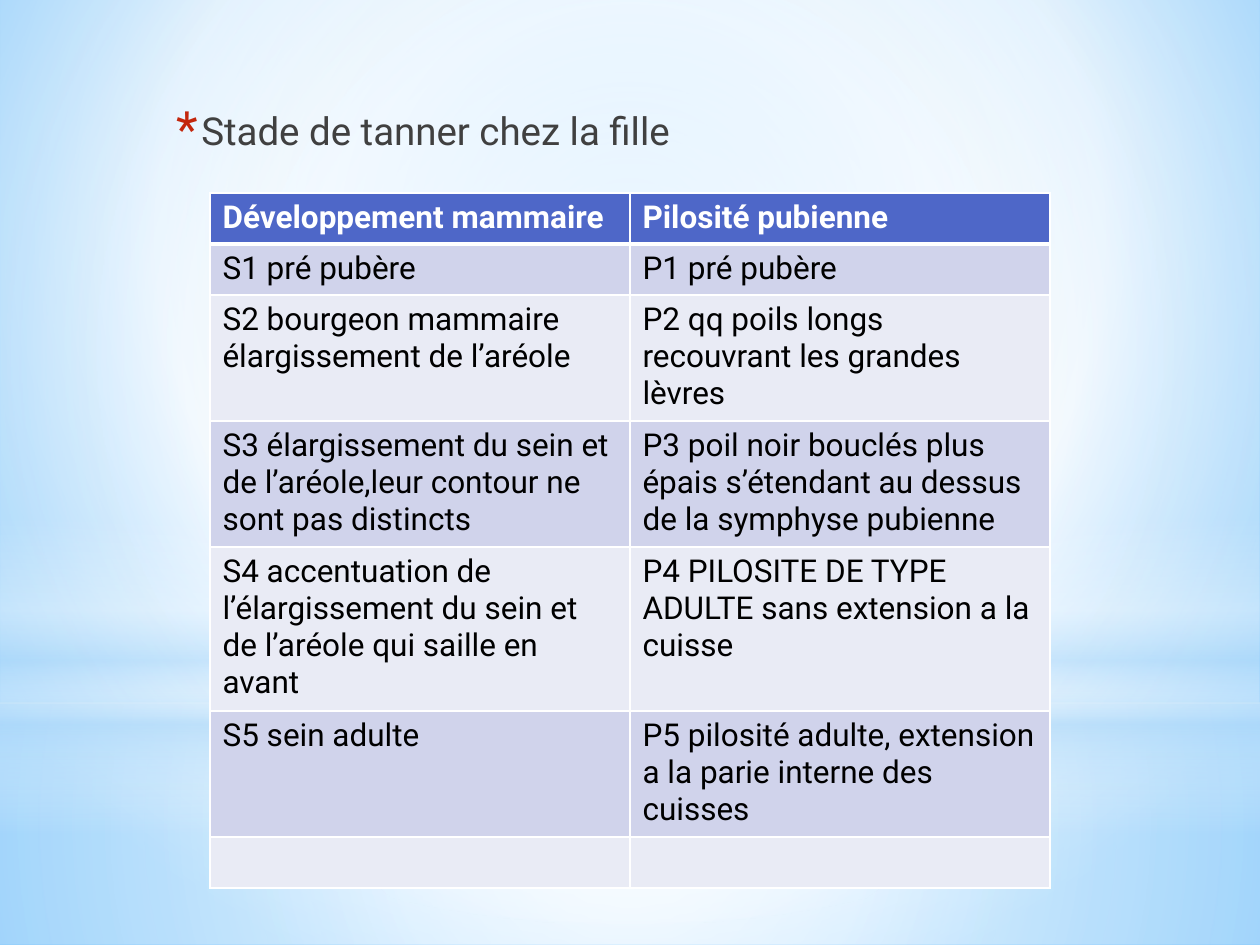
from lxml import etree
from pptx import Presentation
from pptx.dml.color import RGBColor
from pptx.enum.shapes import MSO_SHAPE
from pptx.oxml.ns import qn
from pptx.util import Pt

RECTANGLE = MSO_SHAPE.RECTANGLE
OVAL = MSO_SHAPE.OVAL

WHITE = RGBColor(0xFF, 0xFF, 0xFF)
BLACK = RGBColor(0x00, 0x00, 0x00)
GREY = RGBColor(0x40, 0x40, 0x40)
RED = RGBColor(0xC3, 0x26, 0x0C)
SKY = RGBColor(0x9E, 0xD5, 0xFF)
DEEP_SKY = RGBColor(0x5B, 0xB9, 0xFF)
PALE_SKY = RGBColor(0xB4, 0xDC, 0xFA)
HEADER_BLUE = RGBColor(0x4E, 0x67, 0xC8)
BAND_DARK = RGBColor(0xD0, 0xD3, 0xEB)
BAND_LIGHT = RGBColor(0xE9, 0xEB, 0xF5)
FONT = "Roboto"
CENTER = (50, 50, 50, 50)


def set_gradient(fill, owner, stops, focus=None):
    """Fill with (position, colour, opacity) stops: circular around focus
    (left, top, right, bottom percentages), or top to bottom without one."""
    fill.gradient()
    gradient = next(owner.iter(qn("a:gradFill")))
    for child in list(gradient):
        gradient.remove(child)
    stop_list = etree.SubElement(gradient, qn("a:gsLst"))
    for position, color, opacity in stops:
        stop = etree.SubElement(stop_list, qn("a:gs"), pos=str(position * 1000))
        color_element = etree.SubElement(stop, qn("a:srgbClr"), val=str(color))
        if opacity < 100:
            etree.SubElement(color_element, qn("a:alpha"), val=str(opacity * 1000))
    if focus:
        circle = etree.SubElement(gradient, qn("a:path"), path="circle")
        sides = {side: str(value * 1000) for side, value in zip("ltrb", focus)}
        etree.SubElement(circle, qn("a:fillToRect"), **sides)
    else:
        etree.SubElement(gradient, qn("a:lin"), ang="5400000", scaled="0")


def set_borders(cell, widths):
    """Draw white borders; widths are in points: left, right, top, bottom."""
    properties = cell._tc.get_or_add_tcPr()
    for index, (side, width) in enumerate(zip("LRTB", widths)):
        line = etree.Element(qn(f"a:ln{side}"), w=str(Pt(width)))
        solid = etree.SubElement(line, qn("a:solidFill"))
        etree.SubElement(solid, qn("a:srgbClr"), val=str(WHITE))
        properties.insert(index, line)


presentation = Presentation()
presentation.slide_width = Pt(720)
presentation.slide_height = Pt(540)
slide = presentation.slides.add_slide(presentation.slide_layouts[6])

# Background glow
set_gradient(slide.background.fill, slide._element,
             [(0, SKY, 100), (60, WHITE, 100), (100, DEEP_SKY, 100)],
             (20, 10, 20, 60))
glows = [
    (RECTANGLE, 401.76, 138.24, CENTER,
     [(0, WHITE, 91), (37, WHITE, 76), (100, PALE_SKY, 79)]),
    (RECTANGLE, 0, 401.76, CENTER,
     [(0, WHITE, 89), (48, WHITE, 62), (100, PALE_SKY, 79)]),
    (RECTANGLE, 296.64, 180, None,
     [(0, WHITE, 0), (29, WHITE, 30), (45, PALE_SKY, 40),
      (55, WHITE, 26), (65, PALE_SKY, 60), (100, WHITE, 0)]),
    (OVAL, 126, 401.76, CENTER, [(0, WHITE, 100), (56, WHITE, 0)]),
]
for kind, top, height, focus, stops in glows:
    shape = slide.shapes.add_shape(kind, 0, Pt(top), Pt(720), Pt(height))
    shape.shadow.inherit = False
    shape.line.fill.background()
    set_gradient(shape.fill, shape._element, stops, focus)

# Heading with a red asterisk bullet
heading = slide.shapes.add_textbox(Pt(90), Pt(57.6), Pt(504), Pt(273.6))
heading.text_frame.word_wrap = True
paragraph = heading.text_frame.paragraphs[0]
paragraph.text = "Stade de tanner chez la fille"
paragraph.space_after = Pt(3)
properties = paragraph._p.get_or_add_pPr()
properties.set("marL", str(Pt(18)))
properties.set("indent", str(Pt(-14.4)))
bullet_color = etree.SubElement(properties, qn("a:buClr"))
etree.SubElement(bullet_color, qn("a:srgbClr"), val=str(RED))
etree.SubElement(properties, qn("a:buSzPct"), val="130000")
etree.SubElement(properties, qn("a:buFont"), typeface=FONT)
etree.SubElement(properties, qn("a:buChar"), char="*")
font = paragraph.runs[0].font
font.name = FONT
font.size = Pt(22)
font.color.rgb = GREY

# Table of stages
stages = [
    ("Développement mammaire", "Pilosité pubienne"),
    ("S1 pré pubère", "P1 pré pubère"),
    ("S2 bourgeon mammaire élargissement de l’aréole",
     "P2 qq poils longs recouvrant les grandes lèvres"),
    ("S3 élargissement du sein et de l’aréole,leur contour ne sont pas distincts",
     "P3 poil noir bouclés plus épais s’étendant au dessus de la symphyse pubienne"),
    ("S4 accentuation de l’élargissement du sein et de l’aréole qui saille en avant",
     "P4 PILOSITE DE TYPE ADULTE sans extension a la cuisse"),
    ("S5 sein adulte",
     "P5 pilosité adulte, extension a la parie interne des cuisses"),
    ("", ""),
]
table = slide.shapes.add_table(len(stages), 2, Pt(120), Pt(110.2),
                               Pt(480), Pt(29.2 * len(stages))).table
for row_index, texts in enumerate(stages):
    is_header = row_index == 0
    if is_header:
        fill_color = HEADER_BLUE
    else:
        fill_color = BAND_DARK if row_index % 2 else BAND_LIGHT
    top_width = 3 if row_index == 1 else 1
    bottom_width = 3 if is_header else 1
    for column_index, text in enumerate(texts):
        cell = table.cell(row_index, column_index)
        cell.fill.solid()
        cell.fill.fore_color.rgb = fill_color
        set_borders(cell, (1, 1, top_width, bottom_width))
        if not text:
            continue
        cell.text_frame.text = text
        font = cell.text_frame.paragraphs[0].runs[0].font
        font.name = FONT
        font.size = Pt(18)
        font.bold = is_header
        font.color.rgb = WHITE if is_header else BLACK

presentation.save("out.pptx")
